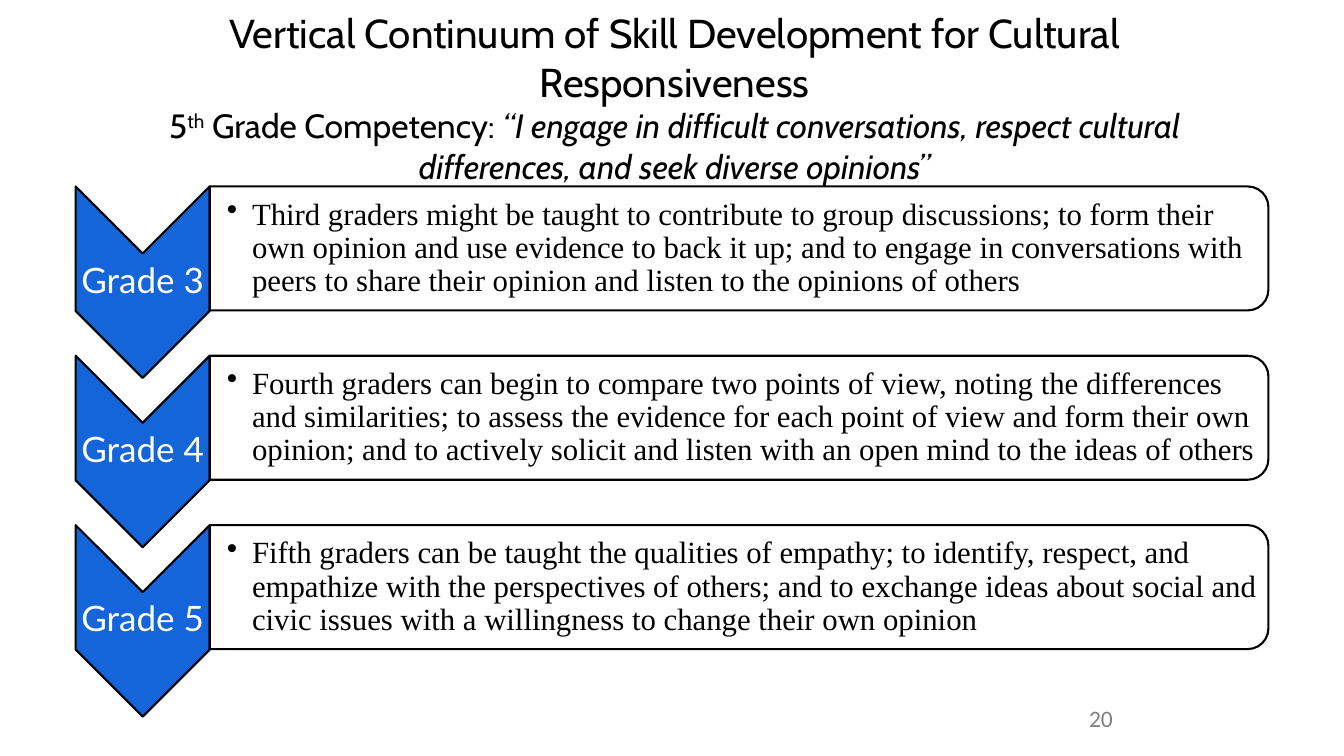
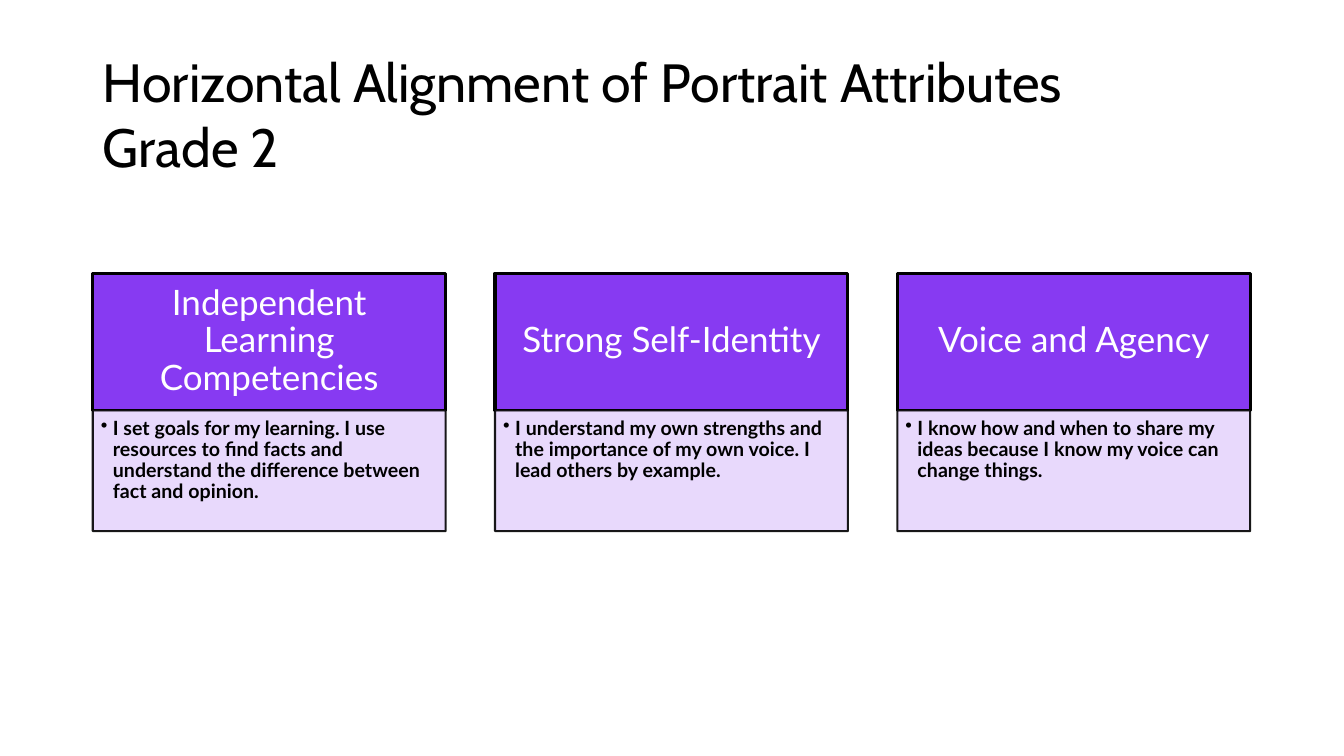
from lxml.etree import SubElement
from pptx import Presentation
from pptx.dml.color import RGBColor
from pptx.enum.shapes import MSO_SHAPE as Shape
from pptx.enum.text import MSO_ANCHOR as Anchor, MSO_AUTO_SIZE as AutoSize, PP_ALIGN as Align
from pptx.oxml.ns import qn
from pptx.util import Inches, Pt

COLORS = {
    "ink": "000000",
    "paper": "FFFFFF",
    "blue": "1465D9",
    "purple": "873AF2",
    "lilac": "E6D5FC",
    "grey": "808080",
}
TITLE_FONT, LABEL_FONT, TEXT_FONT, NUMBER_FONT = "Cabin", "Lato", "Times New Roman", "Calibri"

GRADES = [
    ("Grade 3", "Third graders might be taught to contribute to group discussions; to form their "
     "own opinion and use evidence to back it up; and to engage in conversations with peers to "
     "share their opinion and listen to the opinions of others"),
    ("Grade 4", "Fourth graders can begin to compare two points of view, noting the differences "
     "and similarities; to assess the evidence for each point of view and form their own opinion; "
     "and to actively solicit and listen with an open mind to the ideas of others"),
    ("Grade 5", "Fifth graders can be taught the qualities of empathy; to identify, respect, and "
     "empathize with the perspectives of others; and to exchange ideas about social and civic "
     "issues with a willingness to change their own opinion"),
]
ATTRIBUTES = [
    ("Independent Learning Competencies", "I set goals for my learning. I use resources to find "
     "facts and understand the difference between fact and opinion."),
    ("Strong Self-Identity", "I understand my own strengths and the importance of my own voice. "
     "I lead others by example."),
    ("Voice and Agency", "I know how and when to share my ideas because I know my voice can "
     "change things."),
]


def rgb(name):
    return RGBColor.from_string(COLORS[name])


def style_runs(paragraph, font, size, color="ink", bold=None):
    for run in paragraph.runs:
        run.font.name, run.font.size, run.font.bold = font, Pt(size), bold
        run.font.color.rgb = rgb(color)


def set_frame(frame, margins, anchor=Anchor.MIDDLE):
    """Margins run left, top, right, bottom."""
    frame.word_wrap, frame.auto_size, frame.vertical_anchor = True, AutoSize.NONE, anchor
    (frame.margin_left, frame.margin_top,
     frame.margin_right, frame.margin_bottom) = map(Inches, margins)


def write(frame, text, font, size, color="ink", align=Align.LEFT, spacing=0.9,
          bold=None, hang=None):
    frame.text = text
    for paragraph in frame.paragraphs:
        if hang:
            props = paragraph._p.get_or_add_pPr()
            props.set("marL", str(Inches(hang)))
            props.set("indent", str(-Inches(hang)))
            SubElement(props, qn("a:buChar")).set("char", "•")
        paragraph.alignment, paragraph.line_spacing = align, spacing
        style_runs(paragraph, font, size, color, bold)


def add_box(slide, kind, left, top, width, height, fill, line_width, turned=False, opacity=None):
    """Draw a shape that covers the given box, also when turned by 90 degrees."""
    if turned:
        left, top = left + (width - height) / 2, top + (height - width) / 2
        width, height = height, width
    box = slide.shapes.add_shape(kind, *map(Inches, (left, top, width, height)))
    box.shadow.inherit = False
    box.rotation = 90 if turned else 0
    box.fill.solid()
    box.fill.fore_color.rgb = rgb(fill)
    box.line.color.rgb = rgb("ink")
    box.line.width = Pt(line_width)
    if opacity:
        for color in list(box._element.spPr.iter(qn("a:srgbClr"))):
            SubElement(color, qn("a:alpha")).set("val", str(opacity * 1000))
    return box


def add_text(slide, left, top, width, height, margins):
    frame = slide.shapes.add_textbox(*map(Inches, (left, top, width, height))).text_frame
    set_frame(frame, margins)
    return frame


def add_titled_slide(prs, title, box, size, align, top_margin=0.05):
    slide = prs.slides.add_slide(prs.slide_layouts[5])
    holder = slide.shapes.title
    holder.left, holder.top, holder.width, holder.height = map(Inches, box)
    set_frame(holder.text_frame, (0.1, top_margin, 0.1, 0.05))
    write(holder.text_frame, title, TITLE_FONT, size, align=align, spacing=1.0)
    return slide


def add_competency(frame):
    """Subtitle line with a raised ordinal and a quotation in italics."""
    paragraph = frame.add_paragraph()
    paragraph.alignment = Align.CENTER
    parts = ["5", "th", " Grade Competency: ",
             "“I engage in difficult conversations, respect cultural differences, "
             "and seek diverse opinions”"]
    for part in parts:
        paragraph.add_run().text = part
    style_runs(paragraph, TITLE_FONT, 24)
    _, ordinal, _, quotation = paragraph.runs
    ordinal._r.get_or_add_rPr().set("baseline", "30000")
    quotation.font.italic = True


def add_grade_row(slide, left, top, grade, skills):
    arrow_width, arrow_height, panel_width, panel_height = 1.33, 1.9, 10.5, 1.23
    # Downward arrow with its label
    add_box(slide, Shape.CHEVRON, left, top, arrow_width, arrow_height, "blue", 1.5, turned=True)
    label = add_text(slide, left, top + 0.66, arrow_width, 0.57, (0.02,) * 4)
    write(label, grade, LABEL_FONT, 25, "paper", Align.CENTER)
    # Panel rounded on the right
    panel = (left + arrow_width, top, panel_width, panel_height)
    add_box(slide, Shape.ROUND_2_SAME_RECTANGLE, *panel, "paper", 1.5, turned=True)
    write(add_text(slide, *panel, (0.17, 0.02, 0.08, 0.02)), skills, TEXT_FONT, 22, hang=0.25)


def add_attribute_card(slide, left, top, attribute, statement):
    width, header_height, body_height = 3.5, 1.36, 1.2
    header = add_box(slide, Shape.RECTANGLE, left, top, width, header_height, "purple", 2.25)
    set_frame(header.text_frame, (0.19, 0.11, 0.19, 0.11))
    write(header.text_frame, attribute, LABEL_FONT, 25, "paper", Align.CENTER)
    body = add_box(slide, Shape.RECTANGLE, left, top + header_height, width, body_height,
                   "lilac", 1.5, opacity=90)
    set_frame(body.text_frame, (0.08, 0.08, 0.11, 0.12), Anchor.TOP)
    write(body.text_frame, statement, LABEL_FONT, 14, bold=True, hang=0.12)


def add_page_number(slide, number):
    frame = add_text(slide, 9.42, 6.95, 3, 0.4, (0,) * 4)
    write(frame, number, NUMBER_FONT, 16.8, "grey", Align.CENTER, spacing=0.8)


def build_continuum(prs):
    slide = add_titled_slide(
        prs, "Vertical Continuum of Skill Development for Cultural Responsiveness",
        (0.96, 0, 11.46, 1.43), 28.8, Align.CENTER, top_margin=0.55)
    add_competency(slide.shapes.title.text_frame)
    add_page_number(slide, "20")
    for row, (grade, skills) in enumerate(GRADES):
        add_grade_row(slide, 0.75, 1.85 + row * 1.68, grade, skills)


def build_alignment(prs):
    slide = add_titled_slide(prs, "Horizontal Alignment of Portrait Attributes\nGrade 2",
                             (0.92, 0.4, 11.5, 1.45), 38.4, Align.LEFT)
    for column, (attribute, statement) in enumerate(ATTRIBUTES):
        add_attribute_card(slide, 0.92 + column * 3.99, 2.71, attribute, statement)


def main():
    prs = Presentation()
    prs.slide_width, prs.slide_height = Inches(13.33), Inches(7.5)
    build_continuum(prs)
    build_alignment(prs)
    prs.save("out.pptx")


if __name__ == "__main__":
    main()
